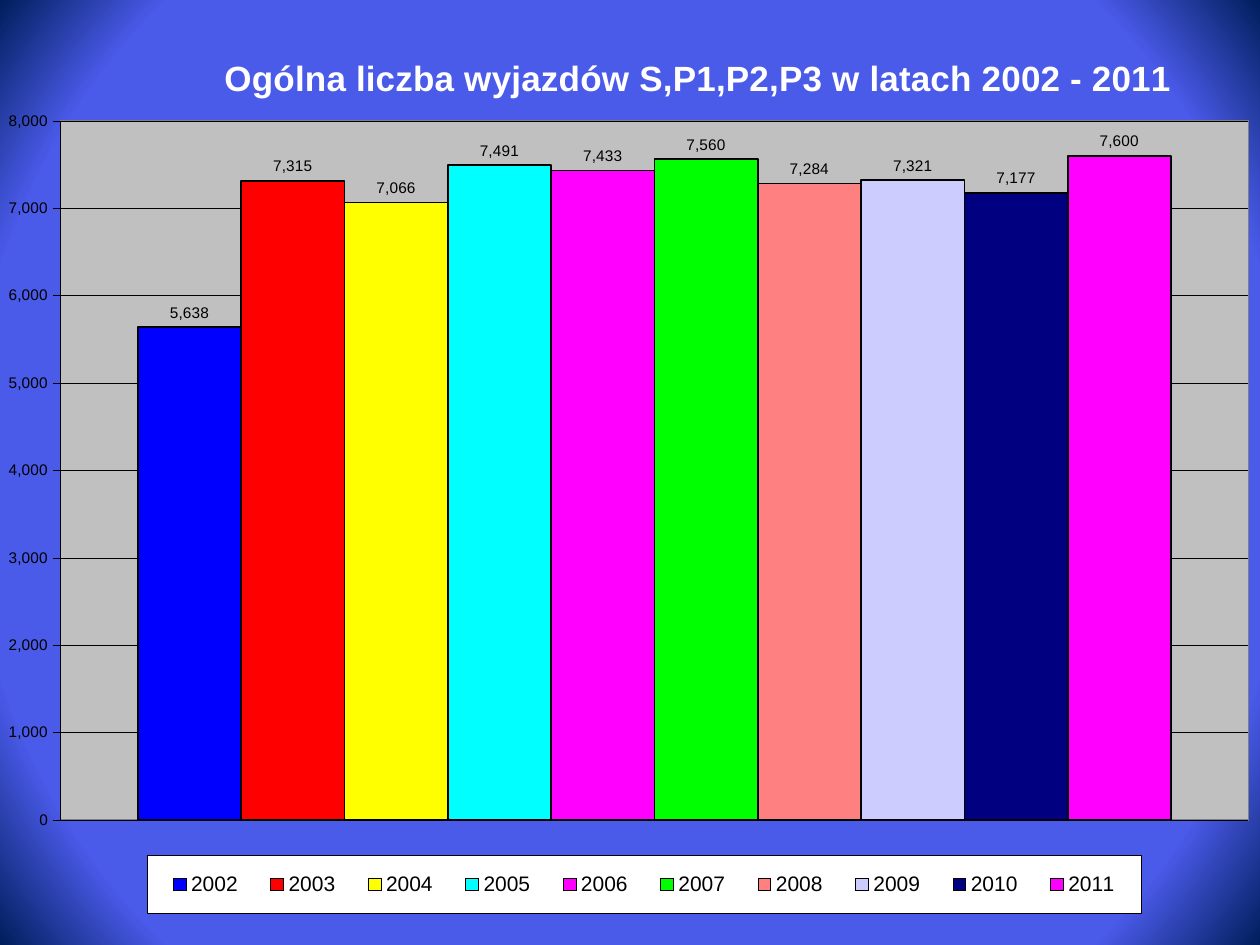
"""Build a slide with a column chart of the total number of trips S, P1, P2, P3 in 2002 - 2011."""
from lxml import etree
from pptx import Presentation
from pptx import util as u
from pptx.chart.data import CategoryChartData
from pptx.dml.color import RGBColor
from pptx.enum import chart as ch
from pptx.oxml import parse_xml
from pptx.oxml.ns import nsdecls, qn


def style(font, size, color="000000", bold=False):
    """Set the face, size, weight and colour of a font."""
    font.name, font.size, font.bold = "Arial", u.Pt(size), bold
    font.color.rgb = RGBColor.from_string(color)


def place(el, index, target=None, **box):
    """Give a chart part a manual layout, with its box in inches."""
    for old in el.findall(qn("c:layout")):
        el.remove(old)
    layout = parse_xml(f"<c:layout {nsdecls('c')}><c:manualLayout/></c:layout>")
    values = {"layoutTarget": target} if target else {}
    values.update(xMode="edge", yMode="edge")
    for tag, length in box.items():
        side = prs.slide_width if tag in "xw" else prs.slide_height
        values[tag] = u.Inches(length) / side
    for tag, val in values.items():
        etree.SubElement(layout[0], qn(f"c:{tag}")).set("val", str(val))
    el.insert(index, layout)


prs = Presentation()
prs.slide_width, prs.slide_height = u.Inches(10), u.Inches(7.5)
s = prs.slides.add_slide(prs.slide_layouts[6])

s.background.fill.solid()
solid = s.background._cSld.find(".//" + qn("a:solidFill"))
solid.getparent().replace(solid, parse_xml(
    f'<a:gradFill {nsdecls("a")} rotWithShape="1"><a:gsLst>'
    '<a:gs pos="84000"><a:srgbClr val="4A5AE9"><a:alpha val="86000"/></a:srgbClr></a:gs>'
    '<a:gs pos="100000"><a:srgbClr val="001E5B"/></a:gs></a:gsLst>'
    '<a:path path="circle"><a:fillToRect l="50000" t="50000" r="50000" b="50000"/></a:path>'
    '</a:gradFill>'))

trips = [
    ("2002", 5638, "0000FF"), ("2003", 7315, "FF0000"), ("2004", 7066, "FFFF00"),
    ("2005", 7491, "00FFFF"), ("2006", 7433, "FF00FF"), ("2007", 7560, "00FF00"),
    ("2008", 7284, "FF8080"), ("2009", 7321, "CCCCFF"), ("2010", 7177, "000080"),
    ("2011", 7600, "FF00FF"),
]
data = CategoryChartData(number_format="#,##0")
data.categories = ["1"]
for year, count, color in trips:
    data.add_series(year, [count])
chart = s.shapes.add_chart(ch.XL_CHART_TYPE.COLUMN_CLUSTERED, 0, 0,
                           u.Inches(10), u.Inches(7.5), data).chart
style(chart.font, 8.8)

chart.has_title = True
tf = chart.chart_title.text_frame
tf.text = "Ogólna liczba wyjazdów S,P1,P2,P3 w latach 2002 - 2011"
style(tf.paragraphs[0].font, 20, "FFFFFF", True)
place(chart.chart_title._element, 1, x=1.73, y=0.39)

plot = chart.plots[0]
plot.gap_width, plot.overlap, plot.vary_by_categories = 150, 0, False
for series, (year, count, color) in zip(plot.series, trips):
    series.format.fill.solid()
    series.format.fill.fore_color.rgb = RGBColor.from_string(color)
    series.format.line.color.rgb = RGBColor.from_string("000000")
    series.format.line.width = u.Pt(1)
    labels = series.data_labels
    labels.show_value = True
    labels.number_format, labels.number_format_is_linked = "#,##0", False
    labels.position = ch.XL_LABEL_POSITION.OUTSIDE_END
    style(labels.font, 8.8)

chart.category_axis.visible = False
axis = chart.value_axis
axis.minimum_scale, axis.maximum_scale, axis.major_unit = 0, 8000, 1000
axis.major_tick_mark = ch.XL_TICK_MARK.OUTSIDE
axis.tick_labels.number_format = "#,##0"
axis.tick_labels.number_format_is_linked = False
style(axis.tick_labels.font, 8.8)
for line in (axis.format.line, axis.major_gridlines.format.line):
    line.color.rgb = RGBColor.from_string("000000")
    line.width = u.Pt(0.25)

chart.has_legend = True
legend = chart.legend
legend.position = ch.XL_LEGEND_POSITION.BOTTOM
legend.include_in_layout = False
style(legend.font, 12)
place(legend._element, 1, x=1.17, y=6.79, w=7.89, h=0.46)

area = chart._chartSpace.chart.plotArea
place(area, 0, "inner", x=0.48, y=0.96, w=9.43, h=5.55)
frames = [("C0C0C0", "808080", 1), ("FFFFFF", "000000", 0.25)]
area_box, legend_box = [parse_xml(
    f'<c:spPr {nsdecls("c", "a")}><a:solidFill><a:srgbClr val="{fill}"/></a:solidFill>'
    f'<a:ln w="{u.Pt(width)}"><a:solidFill><a:srgbClr val="{edge}"/></a:solidFill></a:ln>'
    '</c:spPr>') for fill, edge, width in frames]
area.append(area_box)
legend._element.find(qn("c:txPr")).addprevious(legend_box)

prs.save("out.pptx")
